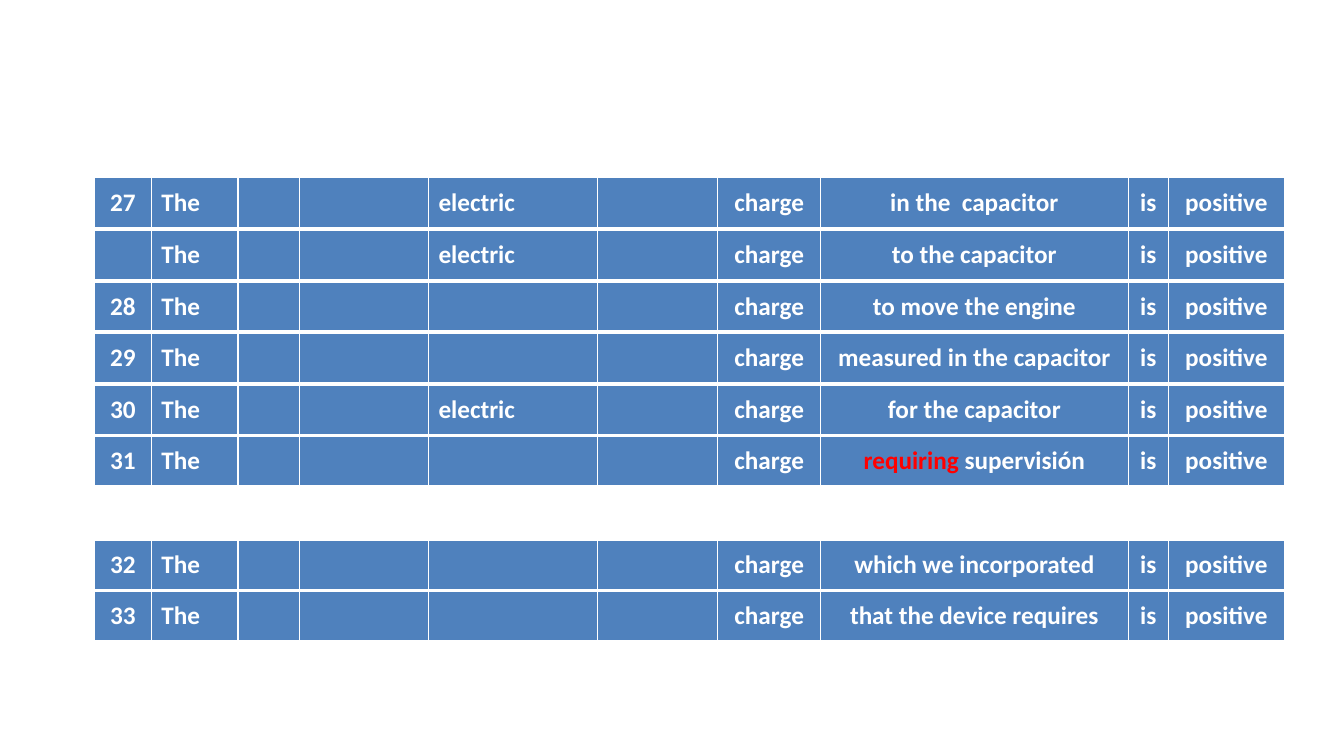
from dataclasses import dataclass

from lxml.etree import SubElement
from pptx import Presentation
from pptx.dml.color import RGBColor
from pptx.enum.text import MSO_ANCHOR, PP_ALIGN
from pptx.oxml.ns import qn
from pptx.util import Inches, Pt


@dataclass(frozen=True)
class Theme:
    font: str = "Calibri"
    size: int = 18
    blue: str = "4F81BD"
    white: str = "FFFFFF"
    red: str = "FF0000"
    thin: int = 1
    thick: int = 3


THEME = Theme()
WIDTHS = [0.56, 0.86, 0.61, 1.28, 1.68, 1.19, 1.02, 3.05, 0.4, 1.15]
LEFT_COLS = (1, 4)

# Number, adjective, red words, rest of the modifier; None leaves a white gap
LINES = [
    ("27", "electric", "", "in the  capacitor"),
    ("", "electric", "", "to the capacitor"),
    ("28", "", "", "to move the engine"),
    ("29", "", "", "measured in the capacitor"),
    ("30", "electric", "", "for the capacitor"),
    ("31", "", "requiring", " supervisión"),
    None,
    ("32", "", "", "which we incorporated"),
    ("33", "", "", "that the device requires"),
]


def add_edges(cell, top):
    """Draw white borders: thin at the sides, thick below."""
    props = cell._tc.get_or_add_tcPr()
    edges = {"L": THEME.thin, "R": THEME.thin, "T": top, "B": THEME.thick}
    for side, width in edges.items():
        line = SubElement(props, qn(f"a:ln{side}"), w=str(Pt(width)))
        fill = SubElement(line, qn("a:solidFill"))
        SubElement(fill, qn("a:srgbClr"), val=THEME.white)


def add_run(para, text, color):
    run = para.add_run()
    run.text = text
    font = run.font
    font.name, font.size, font.bold = THEME.font, Pt(THEME.size), True
    font.color.rgb = RGBColor.from_string(color)


def fill_cell(cell, parts, fill, align, top):
    add_edges(cell, top)
    cell.fill.solid()
    cell.fill.fore_color.rgb = RGBColor.from_string(fill)
    cell.vertical_anchor = MSO_ANCHOR.MIDDLE
    para = cell.text_frame.paragraphs[0]
    para.alignment = align
    for text, color in parts:
        if text:
            add_run(para, text, color)


def row_parts(line):
    """Return the coloured text parts of each cell in a row."""
    if line is None:
        return [[] for _ in WIDTHS]
    number, kind, red, rest = line
    words = [number, "The", "", "", kind, "", "charge", rest, "is ", "positive"]
    cells = [[(word, THEME.white)] for word in words]
    cells[7].insert(0, (red, THEME.red))
    return cells


def add_grid(slide):
    frame = slide.shapes.add_table(
        len(LINES), len(WIDTHS), Inches(0.94), Inches(1.76),
        Inches(sum(WIDTHS)), Inches(4.61))
    table = frame.table
    table.horz_banding = False
    for col, width in zip(table.columns, WIDTHS):
        col.width = Inches(width)
    for i, line in enumerate(LINES):
        fill = THEME.blue if line else THEME.white
        top = THEME.thick if i else THEME.thin
        for j, parts in enumerate(row_parts(line)):
            align = PP_ALIGN.LEFT if j in LEFT_COLS else PP_ALIGN.CENTER
            fill_cell(table.cell(i, j), parts, fill, align, top)


def main():
    deck = Presentation()
    deck.slide_width, deck.slide_height = Inches(13.33), Inches(7.5)
    # The slide has no title, so it takes the blank layout
    slide = deck.slides.add_slide(deck.slide_layouts[6])
    add_grid(slide)
    deck.save("out.pptx")


if __name__ == "__main__":
    main()
